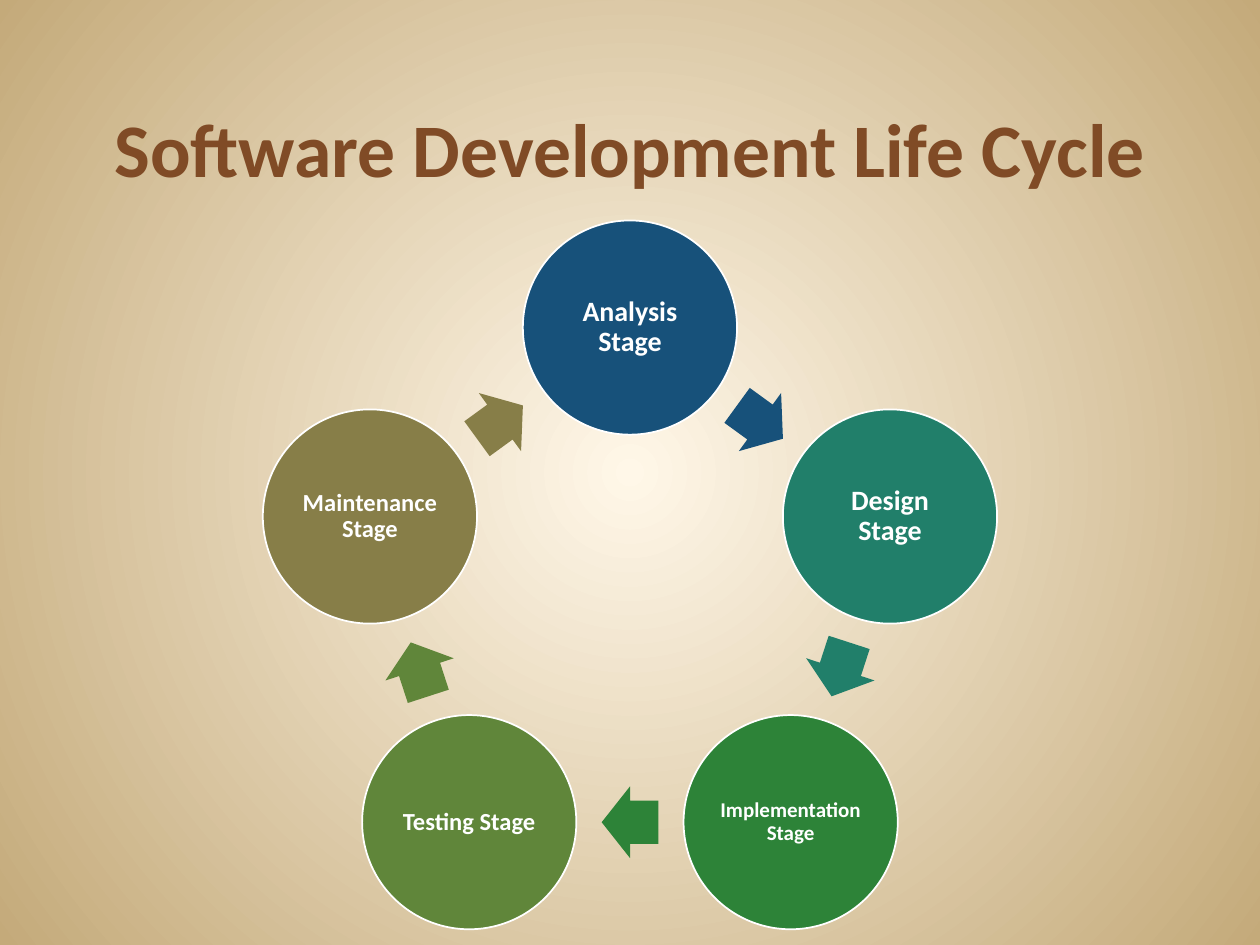
from math import cos, sin, radians

from lxml import etree
from pptx import Presentation
from pptx.dml.color import RGBColor
from pptx.enum import shapes, text
from pptx.oxml.ns import qn
from pptx.util import Inches, Pt

COLORS = {
    "title": "804B26", "white": "FFFFFF", "glow": "FFF7E8", "edge": "C4AA7A",
    "navy": "17517A", "teal": "217F6A", "green": "2D8338",
    "moss": "60863A", "khaki": "877E48",
}
STAGES = [
    ("Analysis Stage", 16, "navy"),
    ("Design Stage", 16, "teal"),
    ("Implementation Stage", 12, "green"),
    ("Testing Stage", 14, "moss"),
    ("Maintenance Stage", 14, "khaki"),
]
MID_X, MID_Y, RADIUS = 5, 4.77, 2.17
DISC = 1.7
ARROW_W, ARROW_H = 0.45, 0.57
STEP = 360 / len(STAGES)


def color(name):
    return RGBColor.from_string(COLORS[name])


def style(frame, size, name):
    para = frame.paragraphs[0]
    para.alignment = text.PP_ALIGN.CENTER
    font = para.runs[0].font
    font.name, font.size, font.bold = "Calibri", Pt(size), True
    font.color.rgb = color(name)


def paint_back(slide):
    """Fill the background with a glow that spreads from the centre."""
    fill = slide.background.fill
    fill.gradient()
    for stop, name, place in zip(fill.gradient_stops, ("glow", "edge"), (0, 1)):
        stop.color.rgb = color(name)
        stop.position = place
    grad = next(slide.background._cSld.iter(qn("a:gradFill")))
    grad.remove(grad.find(qn("a:lin")))
    round_way = etree.SubElement(grad, qn("a:path"), path="circle")
    sides = dict.fromkeys("ltrb", "50000")
    etree.SubElement(round_way, qn("a:fillToRect"), **sides)


def add_title(slide):
    title = slide.shapes.title
    title.left, title.top = Inches(0.5), Inches(0.33)
    title.width, title.height = Inches(9), Inches(1.25)
    frame = title.text_frame
    frame.text = "Software Development Life Cycle"
    frame.auto_size = text.MSO_AUTO_SIZE.NONE
    frame.vertical_anchor = text.MSO_ANCHOR.BOTTOM
    style(frame, 43.2, "title")


def add_solid(slide, kind, x, y, width, height, name):
    """Add a plain filled shape centred on x, y."""
    shape = slide.shapes.add_shape(
        kind, Inches(x - width / 2), Inches(y - height / 2),
        Inches(width), Inches(height))
    shape.shadow.inherit = False
    shape.fill.solid()
    shape.fill.fore_color.rgb = color(name)
    return shape


def add_disc(slide, angle, label, size, name):
    x = MID_X + RADIUS * sin(radians(angle))
    y = MID_Y - RADIUS * cos(radians(angle))
    disc = add_solid(slide, shapes.MSO_SHAPE.OVAL, x, y, DISC, DISC, name)
    disc.line.color.rgb = color("white")
    disc.line.width = Pt(1)
    frame = disc.text_frame
    frame.text = label
    frame.word_wrap = True
    frame.vertical_anchor = text.MSO_ANCHOR.MIDDLE
    frame.margin_left = frame.margin_right = Inches(0.02)
    frame.margin_top = frame.margin_bottom = Inches(0.02)
    frame.paragraphs[0].line_spacing = 0.9
    style(frame, size, "white")


def add_arrow(slide, angle, name):
    """Add an arrow halfway between two neighbouring discs."""
    reach = RADIUS * cos(radians(STEP / 2))
    x = MID_X + reach * sin(radians(angle))
    y = MID_Y - reach * cos(radians(angle))
    arrow = add_solid(slide, shapes.MSO_SHAPE.RIGHT_ARROW, x, y,
                      ARROW_W, ARROW_H, name)
    arrow.adjustments[0], arrow.adjustments[1] = 0.6, 0.5
    arrow.line.fill.background()
    arrow.rotation = angle


def main():
    deck = Presentation()
    deck.slide_width, deck.slide_height = Inches(10), Inches(7.5)
    slide = deck.slides.add_slide(deck.slide_layouts[5])
    paint_back(slide)
    add_title(slide)
    for i, (label, size, name) in enumerate(STAGES):
        add_disc(slide, i * STEP, label, size, name)
        add_arrow(slide, (i + 0.5) * STEP, name)
    deck.save("out.pptx")


if __name__ == "__main__":
    main()
